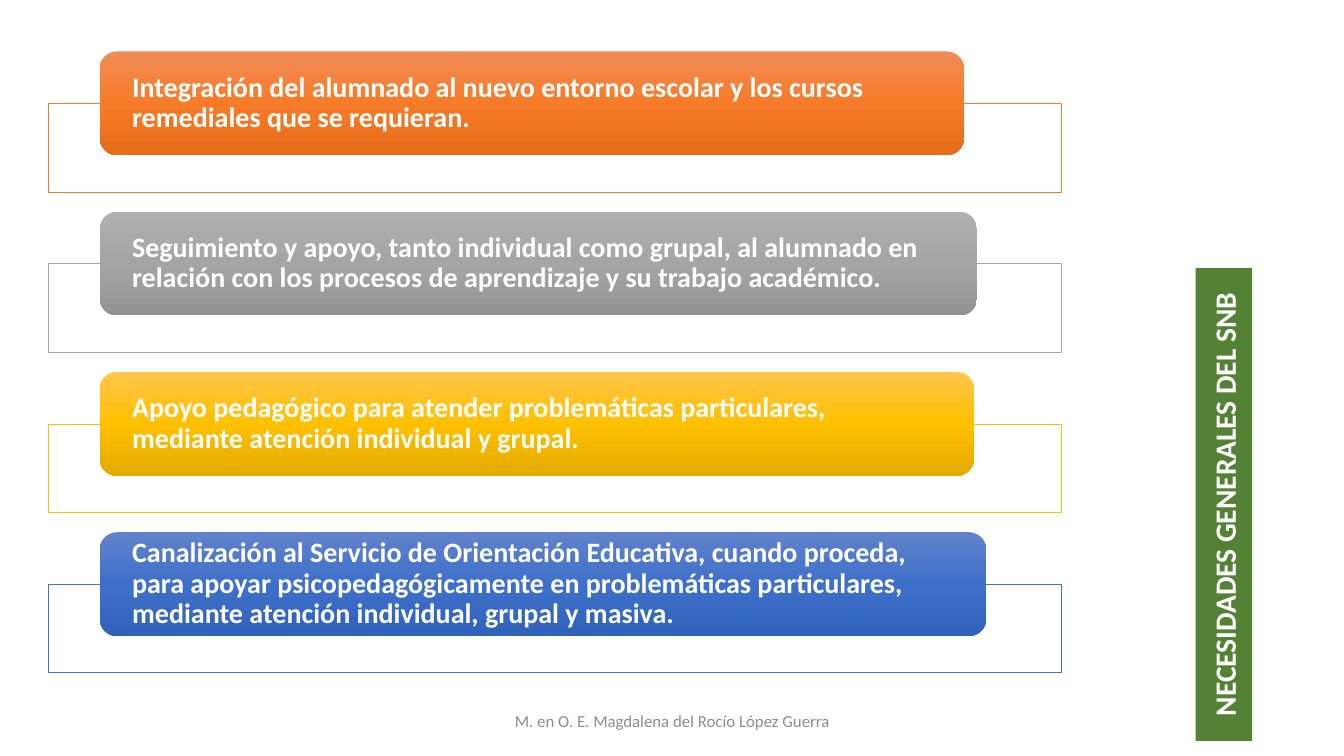
from copy import deepcopy

from pptx import Presentation
from pptx.dml.color import RGBColor
from pptx.enum.shapes import MSO_SHAPE as Shape
from pptx.enum.text import MSO_ANCHOR as Anchor, PP_ALIGN as Align
from pptx.oxml.ns import qn
from pptx.util import Inches, Pt

COLORS = {"white": "FFFFFF", "footer": "8C8C8C", "banner": "548235"}
BANNER = "NECESIDADES GENERALES DEL SNB"
AUTHOR = "M. en O. E. Magdalena del Rocío López Guerra"
# text, label width, frame line, label gradient from top to bottom
NEEDS = [
    ("Integración del alumnado al nuevo entorno escolar y los cursos "
     "remediales que se requieran.",
     8.57, "ED7D31", ("F18C57", "F67B28", "E56C19")),
    ("Seguimiento y apoyo, tanto individual como grupal, al alumnado en "
     "relación con los procesos de aprendizaje y su trabajo académico.",
     8.7, "A5A5A5", ("AFAFAF", "A5A5A5", "939393")),
    ("Apoyo pedagógico para atender problemáticas particulares, mediante "
     "atención individual y grupal.",
     8.67, "FFC000", ("FFC64B", "FFC000", "E3AB00")),
    ("Canalización al Servicio de Orientación Educativa, cuando proceda, para "
     "apoyar psicopedagógicamente en problemáticas particulares, mediante "
     "atención individual, grupal y masiva.",
     8.79, "4472C4", ("6183CB", "3E70CA", "3062BB")),
]
LABEL_LEFT, LABEL_TOP, LABEL_HEIGHT = 0.99, 0.51, 1.03
FRAME_LEFT, FRAME_WIDTH, FRAME_HEIGHT = 0.48, 10.05, 0.88
PITCH = 1.59


def add_box(slide, kind, left, top, width, height):
    """Add an unfilled preset shape without outline or shadow."""
    box = slide.shapes.add_shape(
        kind, Inches(left), Inches(top), Inches(width), Inches(height))
    box.shadow.inherit = False
    box.line.fill.background()
    return box


def fill_solid(box, color, alpha=None):
    box.fill.solid()
    box.fill.fore_color.rgb = RGBColor.from_string(color)
    if alpha is not None:
        rgb = box._element.spPr.find(qn("a:solidFill")).find(qn("a:srgbClr"))
        rgb.makeelement(qn("a:alpha"), {})
        opacity = rgb.makeelement(qn("a:alpha"), {"val": str(alpha * 1000)})
        rgb.append(opacity)


def fill_gradient(box, colors):
    """Spread the colours evenly from top to bottom."""
    box.fill.gradient()
    box.fill.gradient_angle = 270
    stop_list = next(box._element.spPr.iter(qn("a:gsLst")))
    for _ in range(len(colors) - len(stop_list)):
        stop_list.append(deepcopy(stop_list[0]))
    for i, (stop, color) in enumerate(zip(box.fill.gradient_stops, colors)):
        stop.position = i / (len(colors) - 1)
        stop.color.rgb = RGBColor.from_string(color)


def write(box, text, *, size, color, bold=False, align=Align.LEFT,
          side_inset=None, spacing=None):
    frame = box.text_frame
    frame.word_wrap = True
    frame.vertical_anchor = Anchor.MIDDLE
    if side_inset is not None:
        frame.margin_left = frame.margin_right = Inches(side_inset)
        frame.margin_top = frame.margin_bottom = 0
    paragraph = frame.paragraphs[0]
    paragraph.alignment = align
    if spacing:
        paragraph.line_spacing = spacing
    run = paragraph.add_run()
    run.text = text
    run.font.name = "Calibri"
    run.font.size = Pt(size)
    run.font.bold = bold
    run.font.color.rgb = RGBColor.from_string(color)


def main():
    deck = Presentation()
    deck.slide_width, deck.slide_height = Inches(13.33), Inches(7.5)
    slide = deck.slides.add_slide(deck.slide_layouts[6])

    footer = slide.shapes.add_textbox(
        Inches(4.42), Inches(6.95), Inches(4.5), Inches(0.4))
    write(footer, AUTHOR, size=12, color=COLORS["footer"], align=Align.CENTER)

    for row, (need, width, line_color, gradient) in enumerate(NEEDS):
        top = LABEL_TOP + row * PITCH
        frame = add_box(slide, Shape.RECTANGLE, FRAME_LEFT,
                        top + LABEL_HEIGHT / 2, FRAME_WIDTH, FRAME_HEIGHT)
        fill_solid(frame, COLORS["white"], alpha=90)
        frame.line.color.rgb = RGBColor.from_string(line_color)
        frame.line.width = Pt(0.5)

        label = add_box(slide, Shape.ROUNDED_RECTANGLE, LABEL_LEFT, top,
                        width, LABEL_HEIGHT)
        fill_gradient(label, gradient)
        write(label, need, size=20, color=COLORS["white"], bold=True,
              side_inset=0.27, spacing=0.9)

    banner = add_box(slide, Shape.RECTANGLE, 11.86, 2.66, 0.56, 4.69)
    fill_solid(banner, COLORS["banner"])
    write(banner, BANNER, size=21, color=COLORS["white"], bold=True,
          align=Align.CENTER)
    banner.text_frame._txBody.bodyPr.set("vert", "vert270")

    deck.save("out.pptx")


if __name__ == "__main__":
    main()
